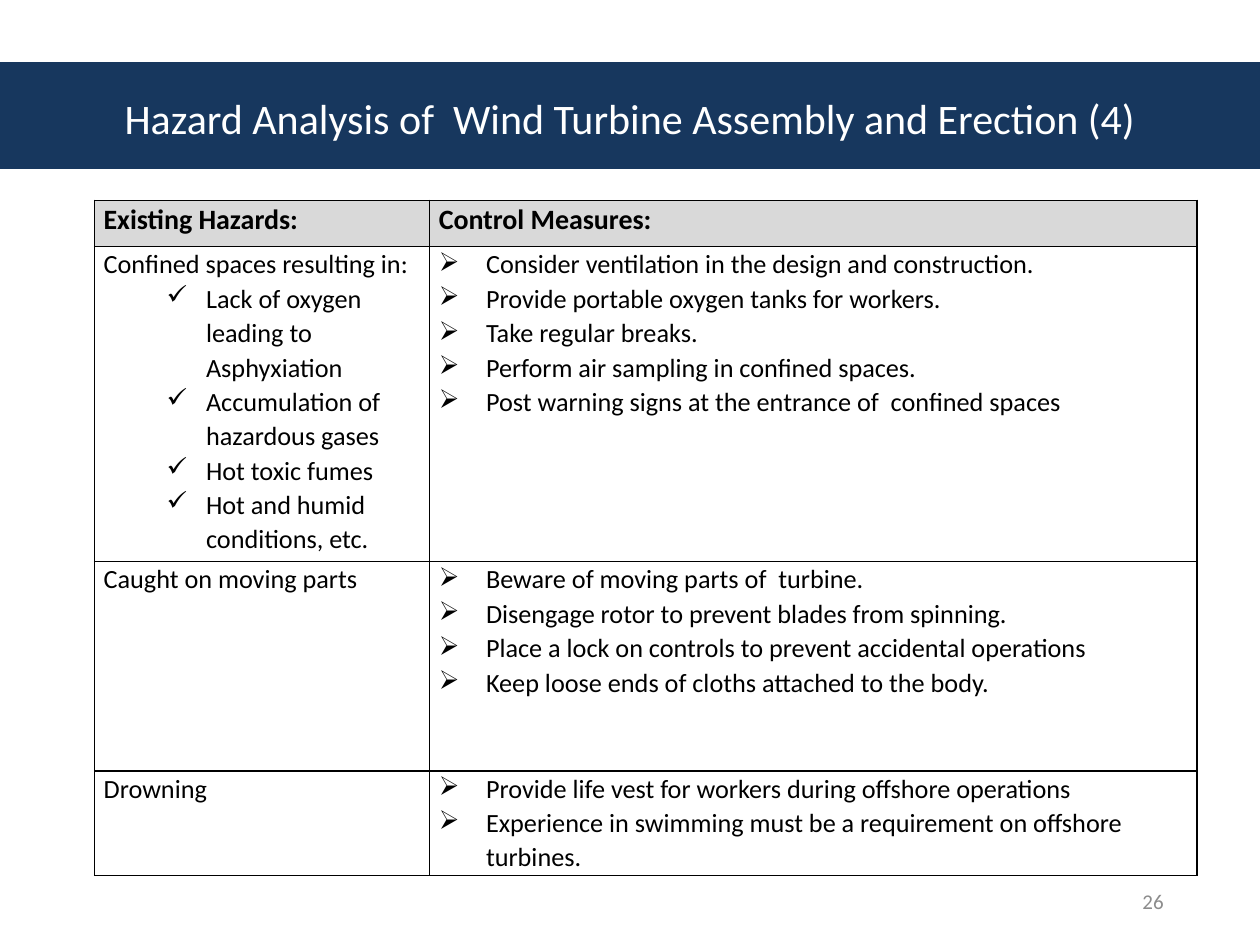
"""Build the wind turbine hazard analysis slide."""
from dataclasses import dataclass

from lxml import etree
from pptx import Presentation
from pptx.dml.color import RGBColor
from pptx.enum.shapes import MSO_SHAPE
from pptx.enum.text import MSO_ANCHOR, PP_ALIGN
from pptx.oxml.ns import qn
from pptx.util import Pt

RECT = MSO_SHAPE.RECTANGLE
MIDDLE = MSO_ANCHOR.MIDDLE
LEFT, CENTER, RIGHT = PP_ALIGN.LEFT, PP_ALIGN.CENTER, PP_ALIGN.RIGHT

NAVY = RGBColor(0x17, 0x37, 0x5E)
WHITE = RGBColor(0xFF, 0xFF, 0xFF)
BLACK = RGBColor(0x00, 0x00, 0x00)
HEADER_GRAY = RGBColor(0xD9, 0xD9, 0xD9)
NUMBER_GRAY = RGBColor(0x8C, 0x8C, 0x8C)

FONT = "Calibri"
COL_WIDTHS = (191.5, 438.5)
HEADERS = ("Existing Hazards:", "Control Measures:")
HEADER_HEIGHT = 26.5


@dataclass(frozen=True)
class Bullet:
    char: str
    margin: float
    hang: float


CHECK = Bullet("✓", 58.5, 22.5)
ARROW = Bullet("➢", 27, 27)


@dataclass(frozen=True)
class Hazard:
    name: str
    height: float
    controls: tuple[str, ...]
    effects: tuple[str, ...] = ()


HAZARDS = (
    Hazard(
        "Confined spaces resulting in:", 180,
        ("Consider ventilation in the design and construction.",
         "Provide portable oxygen tanks for workers.",
         "Take regular breaks.",
         "Perform air sampling in confined spaces.",
         "Post warning signs at the entrance of  confined spaces"),
        ("Lack of oxygen leading to Asphyxiation",
         "Accumulation of hazardous gases",
         "Hot toxic fumes",
         "Hot and humid conditions, etc."),
    ),
    Hazard(
        "Caught on moving parts", 119.5,
        ("Beware of moving parts of  turbine.",
         "Disengage rotor to prevent blades from spinning.",
         "Place a lock on controls to prevent accidental operations",
         "Keep loose ends of cloths attached to the body."),
    ),
    Hazard(
        "Drowning", 60,
        ("Provide life vest for workers during offshore operations",
         "Experience in swimming must be a requirement on offshore turbines."),
    ),
)


def add_text(tf, text: str, *, size: float = 15, color: RGBColor = BLACK,
             bold: bool = False, align: PP_ALIGN = LEFT,
             spacing: float = 1.0, bullet: Bullet | None = None) -> None:
    p = tf.paragraphs[0]
    if p.runs:
        p = tf.add_paragraph()
    p.alignment, p.line_spacing = align, spacing
    r = p.add_run()
    r.text = text
    r.font.name, r.font.size, r.font.bold = FONT, Pt(size), bold
    r.font.color.rgb = color
    if bullet:
        pPr = p._p.get_or_add_pPr()
        pPr.set("marL", str(Pt(bullet.margin)))
        pPr.set("indent", str(-Pt(bullet.hang)))
        etree.SubElement(pPr, qn("a:buChar"), char=bullet.char)


def add_label(s, text: str, box: tuple[float, ...], **fmt) -> None:
    tf = s.shapes.add_textbox(*map(Pt, box)).text_frame
    tf.word_wrap = True
    tf.vertical_anchor = MIDDLE
    add_text(tf, text, **fmt)


def format_cell(cell, fill: RGBColor | None = None) -> None:
    cell.margin_left = cell.margin_right = Pt(5.25)
    cell.margin_top = cell.margin_bottom = 0
    tcPr = cell._tc.get_or_add_tcPr()
    for side in ("lnL", "lnR", "lnT", "lnB"):
        ln = etree.SubElement(tcPr, qn(f"a:{side}"), w=str(Pt(1)))
        line_fill = etree.SubElement(ln, qn("a:solidFill"))
        etree.SubElement(line_fill, qn("a:srgbClr"), val=str(BLACK))
    if fill is None:
        cell.fill.background()
    else:
        cell.fill.solid()
        cell.fill.fore_color.rgb = fill


def add_hazard_table(s) -> None:
    heights = (HEADER_HEIGHT, *(h.height for h in HAZARDS))
    table = s.shapes.add_table(len(heights), len(COL_WIDTHS), Pt(54), Pt(114.5),
                               Pt(sum(COL_WIDTHS)), Pt(sum(heights))).table
    table.horz_banding = False
    for col, width in zip(table.columns, COL_WIDTHS):
        col.width = Pt(width)
    for row, height in zip(table.rows, heights):
        row.height = Pt(height)
    for i, header in enumerate(HEADERS):
        cell = table.cell(0, i)
        format_cell(cell, HEADER_GRAY)
        add_text(cell.text_frame, header, size=16, bold=True, spacing=1.07)
    for i, hazard in enumerate(HAZARDS, start=1):
        left, right = table.cell(i, 0), table.cell(i, 1)
        format_cell(left)
        format_cell(right)
        add_text(left.text_frame, hazard.name, spacing=1.07)
        for effect in hazard.effects:
            add_text(left.text_frame, effect, spacing=1.07, bullet=CHECK)
        for control in hazard.controls:
            add_text(right.text_frame, control, spacing=1.07, bullet=ARROW)


def main() -> None:
    prs = Presentation()
    prs.slide_width, prs.slide_height = Pt(720), Pt(540)
    s = prs.slides.add_slide(prs.slide_layouts[6])
    band = s.shapes.add_shape(RECT, 0, Pt(36), Pt(720), Pt(60))
    band.shadow.inherit = False
    band.fill.solid()
    band.fill.fore_color.rgb = NAVY
    band.line.color.rgb = NAVY
    band.line.width = Pt(0.75)
    add_label(s, "Hazard Analysis of  Wind Turbine Assembly and Erection (4)",
              (36, 22, 648, 90), size=24, color=WHITE, align=CENTER)
    add_hazard_table(s)
    add_label(s, "26", (504, 500.5, 168, 28.75), size=12, color=NUMBER_GRAY,
              align=RIGHT)
    prs.save("out.pptx")


if __name__ == "__main__":
    main()
